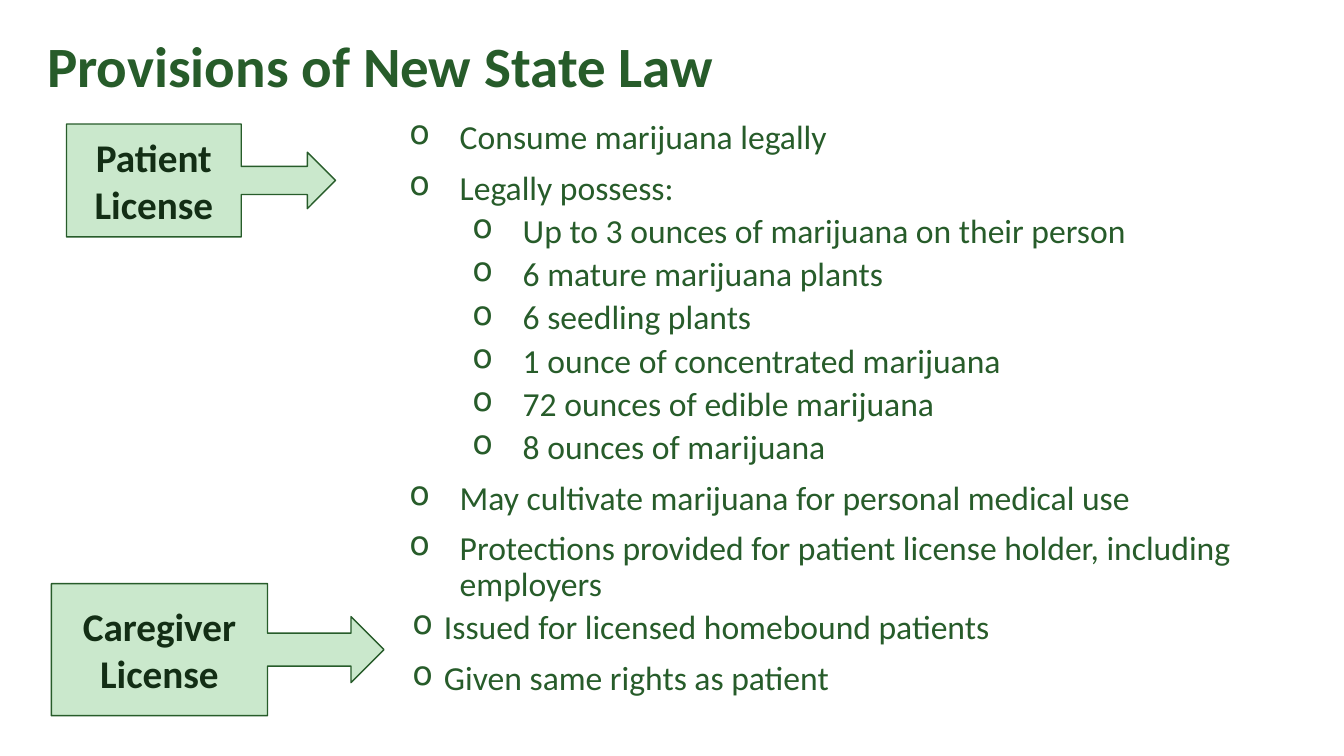
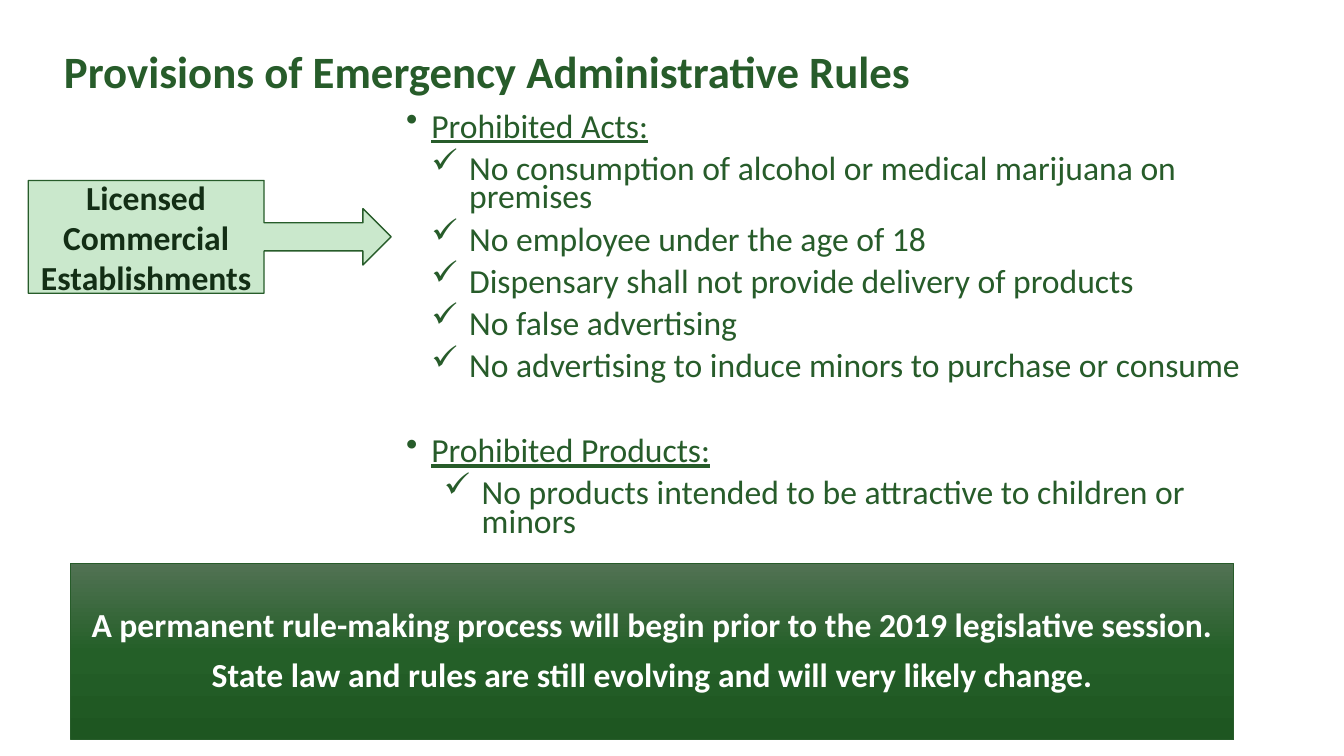
"""Builds two slides on the provisions of a state law and its emergency rules."""
from lxml import etree
from pptx import Presentation
from pptx.dml.color import RGBColor
from pptx.enum.shapes import MSO_SHAPE
from pptx.enum.text import MSO_ANCHOR, PP_ALIGN
from pptx.oxml.ns import qn
from pptx.util import Pt

CALLOUT = MSO_SHAPE.RIGHT_ARROW_CALLOUT
RECTANGLE = MSO_SHAPE.RECTANGLE
MIDDLE, TOP = MSO_ANCHOR.MIDDLE, MSO_ANCHOR.TOP
LEFT, CENTER = PP_ALIGN.LEFT, PP_ALIGN.CENTER

FONT = "Calibri"
GREEN, DARK, PALE, WHITE = "275C2A", "132E15", "CAE8CC", "FFFFFF"
BANNER_STOPS = [(0, "517253"), (50, "245F28"), (100, "1E5621")]

STYLES = {
    "right": dict(bullet="o", margin=40.5, hanging=36, before=10),
    "amount": dict(bullet="o", margin=85.5, hanging=36, before=5, level=1),
    "caregiver": dict(bullet="o", margin=27, hanging=22.5, before=10),
    "heading": dict(bullet="•", margin=18, hanging=18, before=10, underline=True),
    "later heading": dict(bullet="•", margin=18, hanging=18, before=40.5, underline=True),
    "act": dict(bullet="✓", margin=45, hanging=27, before=10),
    "product": dict(bullet="✓", margin=54, hanging=27, before=10),
}

SLIDES = [
    {
        "title": ("Provisions of New State Law", (26.6, 25.9, 648, 50.4), 40.7, 0.8),
        "callouts": [
            (["Patient", "License"], (47.5, 88.6, 192.2, 80.6), 28),
            (["Caregiver", "License"], (36.7, 416.9, 237.6, 94.3), 28),
        ],
        "lists": [
            ((280.8, 82.8, 646.6, 303.1), 0.9, [
                ("right", "Consume marijuana legally"),
                ("right", "Legally possess:"),
                ("amount", "Up to 3 ounces of marijuana on their person"),
                ("amount", "6 mature marijuana plants"),
                ("amount", "6 seedling plants"),
                ("amount", "1 ounce of concentrated marijuana"),
                ("amount", "72 ounces of edible marijuana"),
                ("amount", "8 ounces of marijuana"),
                ("right", "May cultivate marijuana for personal medical use"),
                ("right", "Protections provided for patient license holder, including employers"),
            ]),
            ((283, 432.7, 437.8, 90), 0.9, [
                ("caregiver", "Issued for licensed homebound patients"),
                ("caregiver", "Given same rights as patient"),
            ]),
        ],
    },
    {
        "title": ("Provisions of Emergency Administrative Rules", (38.6, 16.6, 684, 72), 32, 0.9),
        "callouts": [
            (["Licensed Commercial", "Establishments"], (20.2, 128.9, 259.2, 80.6), 24),
        ],
        "lists": [
            ((283, 79.2, 611.3, 328.3), 0.7, [
                ("heading", "Prohibited Acts:"),
                ("act", "No consumption of alcohol or medical marijuana on premises"),
                ("act", "No employee under the age of 18"),
                ("act", "Dispensary shall not provide delivery of products"),
                ("act", "No false advertising"),
                ("act", "No advertising to induce minors to purchase or consume"),
                ("later heading", "Prohibited Products:"),
                ("product", "No products intended to be attractive to children or minors"),
            ]),
        ],
        "banner": ([
            "A permanent rule-making process will begin prior to the 2019 legislative session.",
            "State law and rules are still evolving and will very likely change.",
        ], (50.4, 402.5, 830.9, 126)),
    },
]


def color(value):
    return RGBColor.from_string(value)


def points(box):
    return [Pt(length) for length in box]


def set_bullet(paragraph, bullet, margin, hanging):
    properties = paragraph._p.get_or_add_pPr()
    properties.set("marL", str(Pt(margin)))
    properties.set("indent", str(-Pt(hanging)))
    etree.SubElement(properties, qn("a:buChar")).set("char", bullet)


def add_paragraph(frame, text, size=24, fill=GREEN, bold=False, underline=False, align=LEFT,
                  spacing=1.0, before=0, level=0, bullet=None, margin=0, hanging=0):
    first = not frame.text
    paragraph = frame.paragraphs[0] if first else frame.add_paragraph()
    if bullet:
        set_bullet(paragraph, bullet, margin, hanging)
    paragraph.level = level
    paragraph.alignment = align
    paragraph.line_spacing = spacing
    paragraph.space_before = Pt(0 if first else before)
    run = paragraph.add_run()
    run.text = text
    font = run.font
    font.name, font.size, font.bold, font.underline = FONT, Pt(size), bold, underline
    font.color.rgb = color(fill)


def prepare_frame(shape, anchor):
    frame = shape.text_frame
    frame.word_wrap = True
    frame.vertical_anchor = anchor
    return frame


def add_text_box(slide, box, anchor=TOP):
    return prepare_frame(slide.shapes.add_textbox(*points(box)), anchor)


def add_outlined_shape(slide, kind, box, line_width):
    shape = slide.shapes.add_shape(kind, *points(box))
    shape.shadow.inherit = False
    shape.line.color.rgb = color(GREEN)
    shape.line.width = Pt(line_width)
    return shape


def add_title(slide, text, box, size, spacing):
    add_paragraph(add_text_box(slide, box, MIDDLE), text, size=size, bold=True, spacing=spacing)


def add_callout(slide, lines, box, size):
    shape = add_outlined_shape(slide, CALLOUT, box, 1)
    shape.fill.solid()
    shape.fill.fore_color.rgb = color(PALE)
    frame = prepare_frame(shape, MIDDLE)
    for line in lines:
        add_paragraph(frame, line, size=size, fill=DARK, bold=True, align=CENTER)


def add_list(slide, box, spacing, items):
    frame = add_text_box(slide, box)
    for style, text in items:
        add_paragraph(frame, text, spacing=spacing, **STYLES[style])


def set_gradient(shape, stops):
    shape.fill.gradient()
    shape.fill.gradient_angle = 270
    stop_list = shape._element.spPr.find(qn("a:gradFill")).find(qn("a:gsLst"))
    for stop in list(stop_list):
        stop_list.remove(stop)
    for position, value in stops:
        stop = etree.SubElement(stop_list, qn("a:gs"))
        stop.set("pos", str(position * 1000))
        etree.SubElement(stop, qn("a:srgbClr")).set("val", value)


def add_banner(slide, lines, box):
    shape = add_outlined_shape(slide, RECTANGLE, box, 0.5)
    set_gradient(shape, BANNER_STOPS)
    frame = prepare_frame(shape, MIDDLE)
    for line in lines:
        add_paragraph(frame, line, fill=WHITE, bold=True, align=CENTER, spacing=0.9, before=10)


def main():
    presentation = Presentation()
    presentation.slide_width, presentation.slide_height = Pt(960), Pt(540)
    for content in SLIDES:
        slide = presentation.slides.add_slide(presentation.slide_layouts[6])
        if "banner" in content:
            add_banner(slide, *content["banner"])
        add_title(slide, *content["title"])
        for callout in content["callouts"]:
            add_callout(slide, *callout)
        for bullet_list in content["lists"]:
            add_list(slide, *bullet_list)
    presentation.save("out.pptx")


if __name__ == "__main__":
    main()
